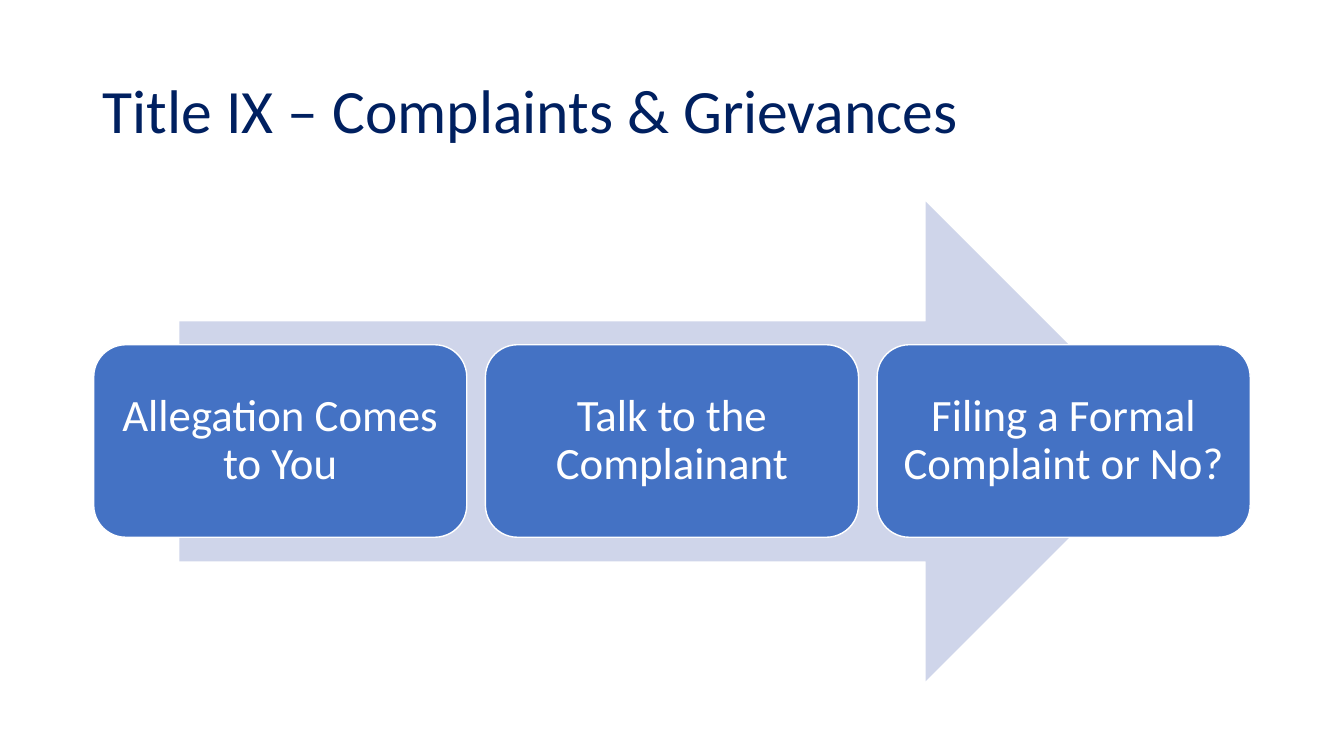
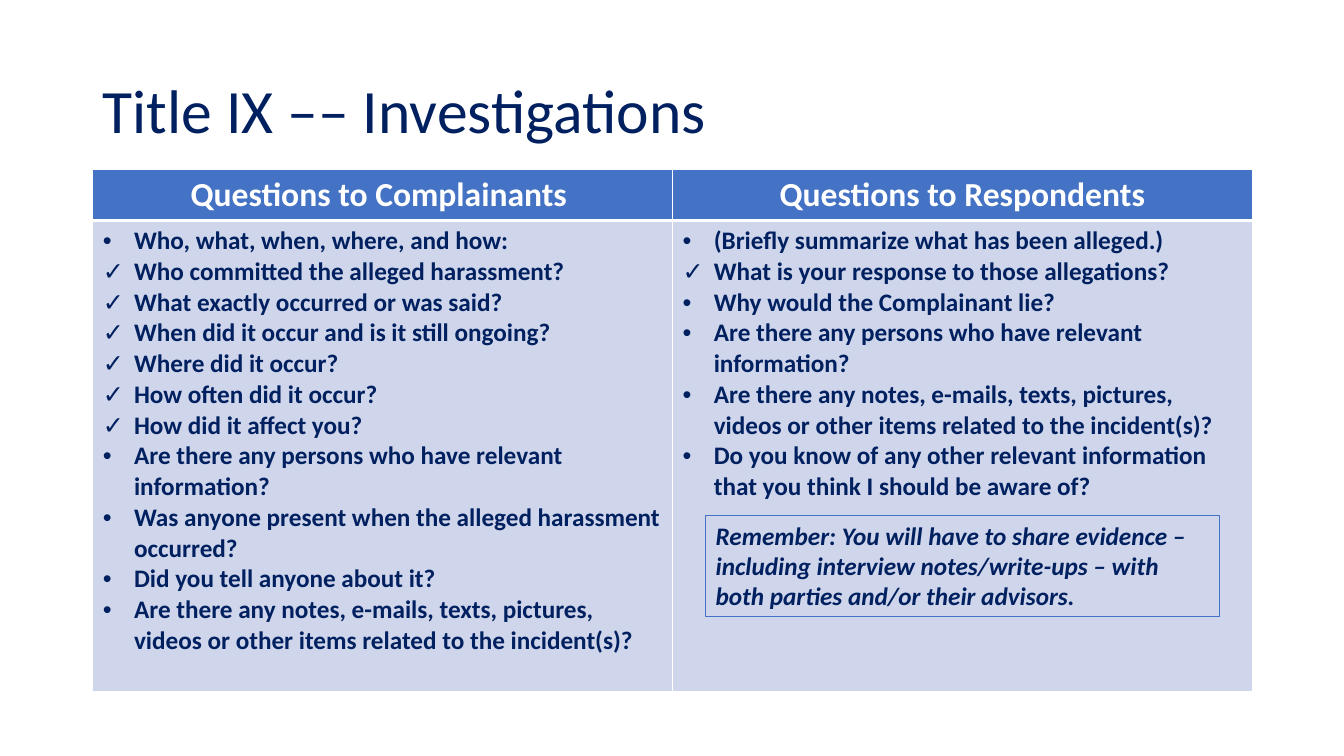
from lxml import etree
from pptx import Presentation
from pptx.dml.color import RGBColor
from pptx.enum.shapes import MSO_SHAPE as Shape
from pptx.enum.text import MSO_ANCHOR as Anchor, MSO_AUTO_SIZE as AutoSize, PP_ALIGN as Align
from pptx.oxml.ns import qn
from pptx.util import Inches, Pt

# Shared style
FONT = "Calibri"
NAVY, BLUE, PALE, WHITE = "002060", "4472C4", "CFD5EA", "FFFFFF"
LEFT, CONTENT_WIDTH = 0.92, 11.5
BULLET, CHECK = "•", "✓"

# Slide content
STEPS = [
    "Allegation Comes to You",
    "Talk to the Complainant",
    "Filing a Formal Complaint or No?",
]
PERSONS = "Are there any persons who have relevant information?"
ITEMS = ("Are there any notes, e-mails, texts, pictures, videos or other items "
         "related to the incident(s)?")
QUESTIONS = {
    "Questions to Complainants ": [
        (BULLET, "Who, what, when, where, and how:"),
        (CHECK, "Who committed the alleged harassment?"),
        (CHECK, "What exactly occurred or was said?"),
        (CHECK, "When did it occur and is it still ongoing?"),
        (CHECK, "Where did it occur?"),
        (CHECK, "How often did it occur?"),
        (CHECK, "How did it affect you?"),
        (BULLET, PERSONS),
        (BULLET, "Was anyone present when the alleged harassment occurred?"),
        (BULLET, "Did you tell anyone about it?"),
        (BULLET, ITEMS),
    ],
    "Questions to Respondents": [
        (BULLET, "(Briefly summarize what has been alleged.)"),
        (CHECK, "What is your response to those allegations?"),
        (BULLET, "Why would the Complainant lie?"),
        (BULLET, PERSONS),
        (BULLET, ITEMS),
        (BULLET, "Do you know of any other relevant information that you think "
                 "I should be aware of?"),
    ],
}
REMINDER = ("Remember: You will have to share evidence – including interview "
            "notes/write-ups – with both parties and/or their advisors.")


def color(hex_value):
    return RGBColor.from_string(hex_value)


def box(left, top, width, height):
    return [Inches(value) for value in (left, top, width, height)]


def write_text(paragraph, text, size=18, fill=NAVY, bold=False, italic=False,
               align=Align.LEFT, line_spacing=1.0, bullet=None):
    paragraph.alignment = align
    paragraph.line_spacing = line_spacing
    paragraph.space_before = paragraph.space_after = Pt(0)
    run = paragraph.add_run()
    run.text = text
    font = run.font
    font.name, font.size, font.bold, font.italic = FONT, Pt(size), bold, italic
    font.color.rgb = color(fill)
    if bullet:
        add_bullet(paragraph, bullet)


def add_bullet(paragraph, character, indent=0.31):
    properties = paragraph._p.get_or_add_pPr()
    properties.set("marL", str(Inches(indent)))
    properties.set("indent", str(-Inches(indent)))
    etree.SubElement(properties, qn("a:buFont"), typeface="Arial")
    etree.SubElement(properties, qn("a:buChar"), char=character)


def add_titled_slide(presentation, text):
    slide = presentation.slides.add_slide(presentation.slide_layouts[5])
    title = slide.shapes.title
    title.left, title.top, title.width, title.height = box(LEFT, 0.4, CONTENT_WIDTH, 1.45)
    frame = title.text_frame
    frame.auto_size = AutoSize.NONE
    frame.vertical_anchor = Anchor.MIDDLE
    write_text(frame.paragraphs[0], text, size=44, line_spacing=0.9)
    return slide


def add_filled_shape(slide, kind, position, fill, line=None):
    shape = slide.shapes.add_shape(kind, *position)
    shape.shadow.inherit = False
    shape.fill.solid()
    shape.fill.fore_color.rgb = color(fill)
    if line:
        shape.line.color.rgb = color(line)
        shape.line.width = Pt(1)
    else:
        shape.line.fill.background()
    return shape


def add_step(slide, text, left):
    shape = add_filled_shape(slide, Shape.ROUNDED_RECTANGLE,
                             box(left, 3.42, 3.7, 1.91), BLUE, line=WHITE)
    frame = shape.text_frame
    frame.word_wrap = True
    frame.vertical_anchor = Anchor.MIDDLE
    frame.margin_left = frame.margin_right = Inches(0.13)
    write_text(frame.paragraphs[0], text, size=32, fill=WHITE,
               align=Align.CENTER, line_spacing=0.9)


def set_borders(cell, bottom):
    properties = cell._tc.get_or_add_tcPr()
    widths = {"a:lnL": 1, "a:lnR": 1, "a:lnT": 1, "a:lnB": bottom}
    for index, (tag, width) in enumerate(widths.items()):
        line = etree.Element(qn(tag), w=str(Pt(width)))
        solid = etree.SubElement(line, qn("a:solidFill"))
        etree.SubElement(solid, qn("a:srgbClr"), val=WHITE)
        properties.insert(index, line)


def style_cell(cell, fill, bottom=1):
    cell.fill.solid()
    cell.fill.fore_color.rgb = color(fill)
    set_borders(cell, bottom)


def add_question_table(slide):
    heights = (0.5, 4.67)
    table = slide.shapes.add_table(
        2, len(QUESTIONS), *box(LEFT, 1.68, CONTENT_WIDTH, sum(heights))).table
    table.horz_banding = False
    for row, height in zip(table.rows, heights):
        row.height = Inches(height)
    for column, (heading, questions) in enumerate(QUESTIONS.items()):
        header, body = table.cell(0, column), table.cell(1, column)
        style_cell(header, BLUE, bottom=3)
        write_text(header.text_frame.paragraphs[0], heading, size=24,
                   fill=WHITE, bold=True, align=Align.CENTER)
        style_cell(body, PALE)
        frame = body.text_frame
        for index, (bullet, question) in enumerate(questions):
            paragraph = frame.add_paragraph() if index else frame.paragraphs[0]
            write_text(paragraph, question, bold=True, bullet=bullet)


def add_reminder(slide):
    reminder = slide.shapes.add_textbox(*box(7, 5.11, 5.1, 1.01))
    reminder.line.color.rgb = color(BLUE)
    reminder.line.width = Pt(0.75)
    reminder.text_frame.word_wrap = True
    write_text(reminder.text_frame.paragraphs[0], REMINDER, bold=True, italic=True)


def main():
    presentation = Presentation()
    presentation.slide_width, presentation.slide_height = Inches(13.33), Inches(7.5)

    # Complaint process
    slide = add_titled_slide(presentation, "Title IX – Complaints & Grievances")
    add_filled_shape(slide, Shape.RIGHT_ARROW, box(1.78, 2, 9.78, 4.76), PALE)
    for index, step in enumerate(STEPS):
        add_step(slide, step, 0.93 + index * 3.885)

    # Interview questions
    slide = add_titled_slide(presentation, "Title IX –– Investigations")
    add_question_table(slide)
    add_reminder(slide)

    presentation.save("out.pptx")


if __name__ == "__main__":
    main()
